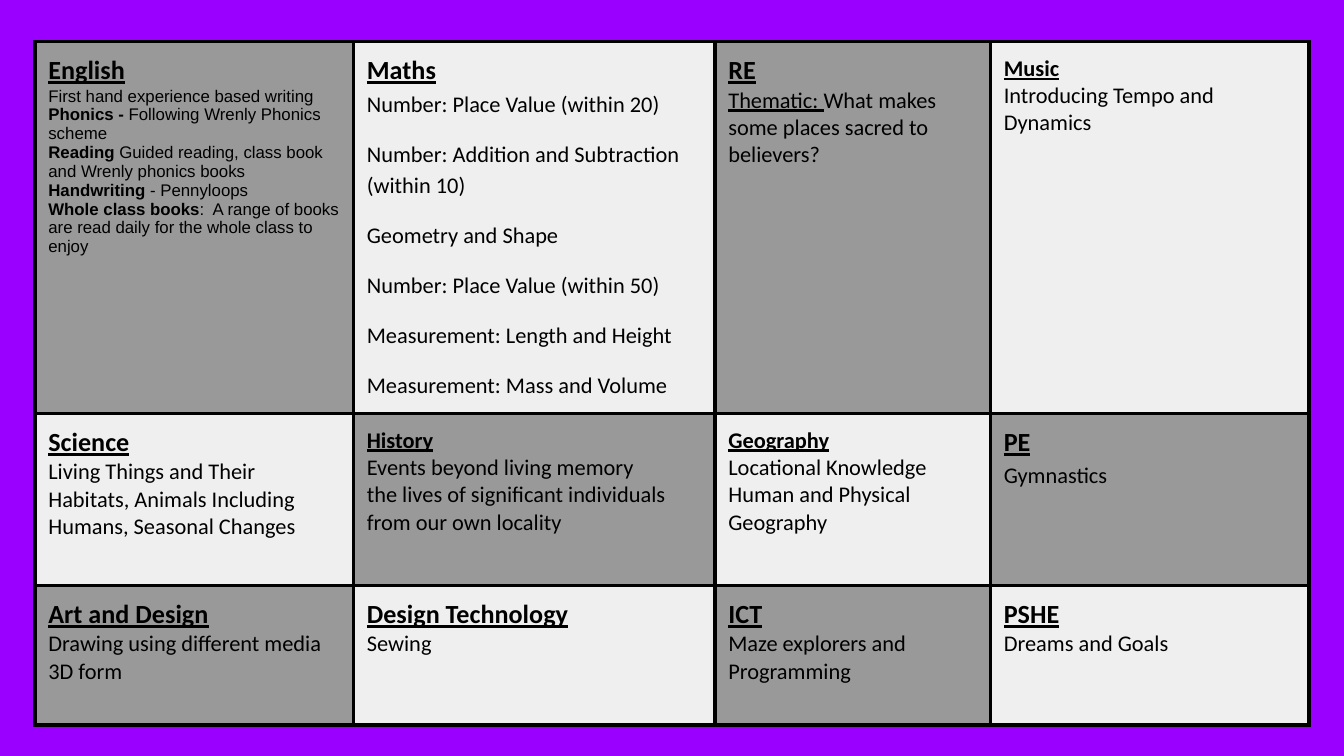
from lxml.etree import SubElement
from pptx import Presentation
from pptx.dml.color import RGBColor
from pptx.oxml.ns import qn
from pptx.util import Inches, Pt

COLORS = {"background": "9900FF", "dark": "999999", "light": "EFEFEF", "ink": "000000"}
COLUMN_WIDTHS = [2.37, 2.69, 2.05, 2.37]
ROW_HEIGHTS = [2.76, 1.28, 1.04]

# Each subject: heading, heading size, lines. A "|" ends the emphasised lead of a line.
SUBJECTS = [
    [
        ("English", 14, [
            "First hand experience based writing ",
            "Phonics -| Following Wrenly Phonics scheme",
            "Reading |Guided reading, class book and Wrenly phonics books",
            "Handwriting| - Pennyloops",
            "Whole class books|:  A range of books are read daily for the whole class to enjoy",
        ]),
        ("Maths", 14, [
            "Number: Place Value (within 20)",
            "Number: Addition and Subtraction (within 10)",
            "Geometry and Shape",
            "Number: Place Value (within 50)",
            "Measurement: Length and Height",
            "Measurement: Mass and Volume",
        ]),
        ("RE", 14, ["Thematic: |What makes some places sacred to believers?"]),
        ("Music", 12, ["Introducing Tempo and Dynamics"]),
    ],
    [
        ("Science", 14, ["Living Things and Their Habitats, Animals Including Humans, Seasonal Changes"]),
        ("History", 12, [
            "Events beyond living memory",
            "the lives of significant individuals from our own locality",
        ]),
        ("Geography", 12, ["Locational Knowledge", "Human and Physical Geography"]),
        ("PE", 14, ["Gymnastics"]),
    ],
    [
        ("Art and Design", 14, ["Drawing using different media", "3D form"]),
        ("Design Technology", 14, ["Sewing"]),
        ("ICT", 14, ["Maze explorers and Programming"]),
        ("PSHE", 14, ["Dreams and Goals"]),
    ],
]


def add_run(paragraph, text, size, font="Calibri", bold=False, underline=False):
    run = paragraph.add_run()
    run.text = text
    run.font.name = font
    run.font.size = Pt(size)
    run.font.bold = bold
    run.font.underline = underline
    run.font.color.rgb = RGBColor.from_string(COLORS["ink"])


def style_cell(cell, fill):
    """Set margins, four black borders and the fill; borders must precede the fill."""
    cell.margin_left = cell.margin_right = Inches(0.1)
    cell.margin_top = cell.margin_bottom = Inches(0.1)
    properties = cell._tc.get_or_add_tcPr()
    for side in ("lnL", "lnR", "lnT", "lnB"):
        border = SubElement(properties, qn(f"a:{side}"), w=str(Pt(2.25)))
        solid = SubElement(border, qn("a:solidFill"))
        SubElement(solid, qn("a:srgbClr"), val=COLORS["ink"])
    cell.fill.solid()
    cell.fill.fore_color.rgb = RGBColor.from_string(COLORS[fill])


prs = Presentation()
prs.slide_width, prs.slide_height = Inches(10), Inches(10 * 9 / 16)
slide = prs.slides.add_slide(prs.slide_layouts[6])
slide.background.fill.solid()
slide.background.fill.fore_color.rgb = RGBColor.from_string(COLORS["background"])

curriculum = slide.shapes.add_table(
    len(ROW_HEIGHTS), len(COLUMN_WIDTHS), Inches(0.26), Inches(0.31),
    Inches(sum(COLUMN_WIDTHS)), Inches(sum(ROW_HEIGHTS)),
).table
curriculum.first_row = curriculum.horz_banding = False
for column, width in zip(curriculum.columns, COLUMN_WIDTHS):
    column.width = Inches(width)
for row, height in zip(curriculum.rows, ROW_HEIGHTS):
    row.height = Inches(height)

for r, subject_row in enumerate(SUBJECTS):
    for c, (heading, heading_size, lines) in enumerate(subject_row):
        cell = curriculum.cell(r, c)
        style_cell(cell, "light" if (r + c) % 2 else "dark")
        frame = cell.text_frame
        add_run(frame.paragraphs[0], heading, heading_size, bold=True, underline=True)

        is_english = heading == "English"
        size, font = (9, "Arial") if is_english else (12, "Calibri")
        for i, line in enumerate(lines):
            paragraph = frame.add_paragraph()
            if heading in ("Maths", "PE"):
                paragraph.line_spacing = 1.15
            if i and heading == "Maths":
                paragraph.space_before = Pt(10)
            lead, divider, rest = line.rpartition("|")
            if divider:
                add_run(paragraph, lead, size, font, bold=is_english, underline=not is_english)
            add_run(paragraph, rest, size, font)

prs.save("out.pptx")
